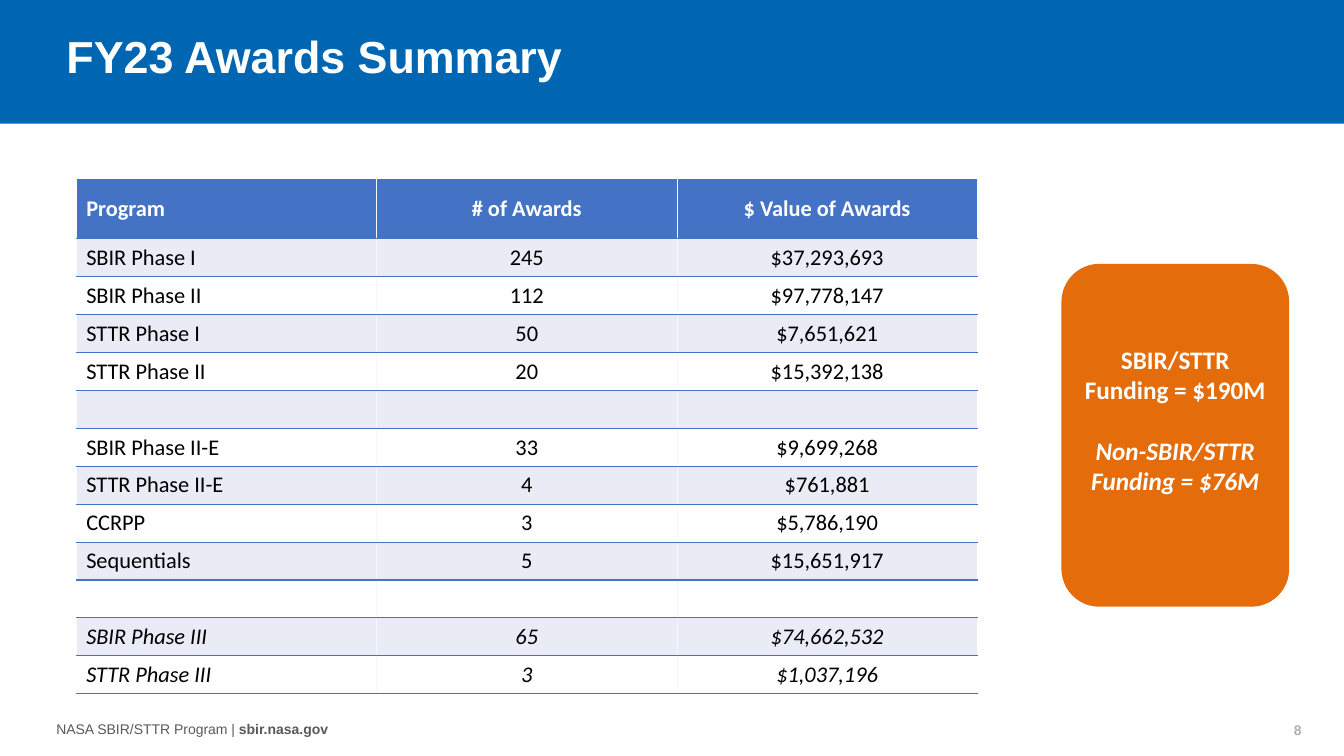
"""Build the FY23 awards summary slide."""
from lxml.etree import SubElement
from pptx import Presentation
from pptx.dml.color import RGBColor
from pptx.enum.shapes import MSO_SHAPE as Shape
from pptx.enum.text import MSO_ANCHOR as Anchor, MSO_AUTO_SIZE as Fit, PP_ALIGN as Align
from pptx.oxml.ns import qn
from pptx.util import Cm, Pt


def paint(fill, color):
    fill.solid()
    fill.fore_color.rgb = RGBColor.from_string(color)


def write(para, text, size=16, font="Calibri", color="FFFFFF", bold=False,
          italic=False, align=Align.LEFT):
    para.alignment = align
    run = para.add_run()
    run.text = text
    face = run.font
    face.name, face.size, face.bold, face.italic = font, Pt(size), bold, italic
    paint(face.fill, color)


deck = Presentation()
deck.slide_width, deck.slide_height = Cm(33.87), Cm(19.05)
slide = deck.slides.add_slide(deck.slide_layouts[5])
shapes = slide.shapes

title = shapes.title
title.left, title.top, title.width, title.height = Cm(1.42), Cm(0), Cm(29.06), Cm(2.97)
frame = title.text_frame
frame.auto_size = Fit.NONE
frame.vertical_anchor = Anchor.MIDDLE
frame.paragraphs[0].line_spacing = 0.9
write(frame.paragraphs[0], "FY23 Awards Summary", size=32, font="Arial", bold=True)

band = shapes.add_shape(Shape.RECTANGLE, Cm(0), Cm(0), deck.slide_width, Cm(3.12))
card = shapes.add_shape(Shape.ROUNDED_RECTANGLE, Cm(26.75), Cm(6.65), Cm(5.74), Cm(8.64))
for shape, color in ((band, "0066B2"), (card, "E46C0A")):
    shape.shadow.inherit = False
    shape.line.fill.background()
    paint(shape.fill, color)
title._element.addprevious(band._element)

frame = card.text_frame
frame.word_wrap = True
frame.vertical_anchor = Anchor.MIDDLE
frame.margin_bottom = Cm(0.9)
lines = ["SBIR/STTR", "Funding = $190M", "Non-SBIR/STTR", "Funding = $76M"]
for i, line in enumerate(lines):
    para = frame.add_paragraph() if i else frame.paragraphs[0]
    if i == 2:
        para.space_before = Pt(22)
    write(para, line, size=18, bold=True, italic=i > 1, align=Align.CENTER)

awards = [
    ("Program", "# of Awards", "$ Value of Awards"),
    ("SBIR Phase I", "245", "$37,293,693"),
    ("SBIR Phase II", "112", "$97,778,147"),
    ("STTR Phase I", "50", "$7,651,621"),
    ("STTR Phase II", "20", "$15,392,138"),
    ("", "", ""),
    ("SBIR Phase II-E", "33", "$9,699,268"),
    ("STTR Phase II-E", "4", "$761,881"),
    ("CCRPP", "3", "$5,786,190"),
    ("Sequentials", "5", "$15,651,917"),
    ("", "", ""),
    ("SBIR Phase III", "65", "$74,662,532"),
    ("STTR Phase III", "3", "$1,037,196"),
]
table = shapes.add_table(len(awards), 3, Cm(1.92), Cm(4.52), Cm(22.71), Cm(12.95)).table
for col in table.columns:
    col.width = Cm(7.57)
for r, row in enumerate(awards):
    table.rows[r].height = Cm(0.955 if r else 1.5)
    for c, text in enumerate(row):
        cell = table.cell(r, c)
        cell.vertical_anchor = Anchor.MIDDLE
        cell.margin_top = cell.margin_bottom = Cm(0)
        props = cell._tc.get_or_add_tcPr()
        edges = [("a:lnL", "F4F7FC", 0.75)] if c else []
        edges += [("a:lnR", "F4F7FC", 0.75)] if c < 2 else []
        edges += [("a:lnT", "4472C4", 0.86), ("a:lnB", "4472C4", 0.86)]
        for tag, color, width in edges:
            edge = SubElement(props, qn(tag), w=str(Pt(width)))
            SubElement(SubElement(edge, qn("a:solidFill")), qn("a:srgbClr"), val=color)
        paint(cell.fill, ("E9EBF5" if r % 2 else "FFFFFF") if r else "4472C4")
        if text:
            write(cell.text_frame.paragraphs[0], text, bold=r == 0, italic=r > 10,
                  color="000000" if r else "FFFFFF",
                  align=Align.CENTER if c else Align.LEFT)

foot = shapes.add_textbox(Cm(1.17), Cm(18.03), Cm(7.47), Cm(0.69)).text_frame
foot.word_wrap = False
for text, bold in (("NASA SBIR/STTR Program | ", False), ("sbir.nasa.gov", True)):
    write(foot.paragraphs[0], text, size=10, font="Arial", color="595959", bold=bold)

page = shapes.add_textbox(Cm(25.15), Cm(17.88), Cm(7.9), Cm(1.02)).text_frame
page.word_wrap = True
page.vertical_anchor = Anchor.MIDDLE
write(page.paragraphs[0], "8", size=10, font="Arial", color="B0B0B0", bold=True,
      align=Align.RIGHT)

deck.save("out.pptx")
